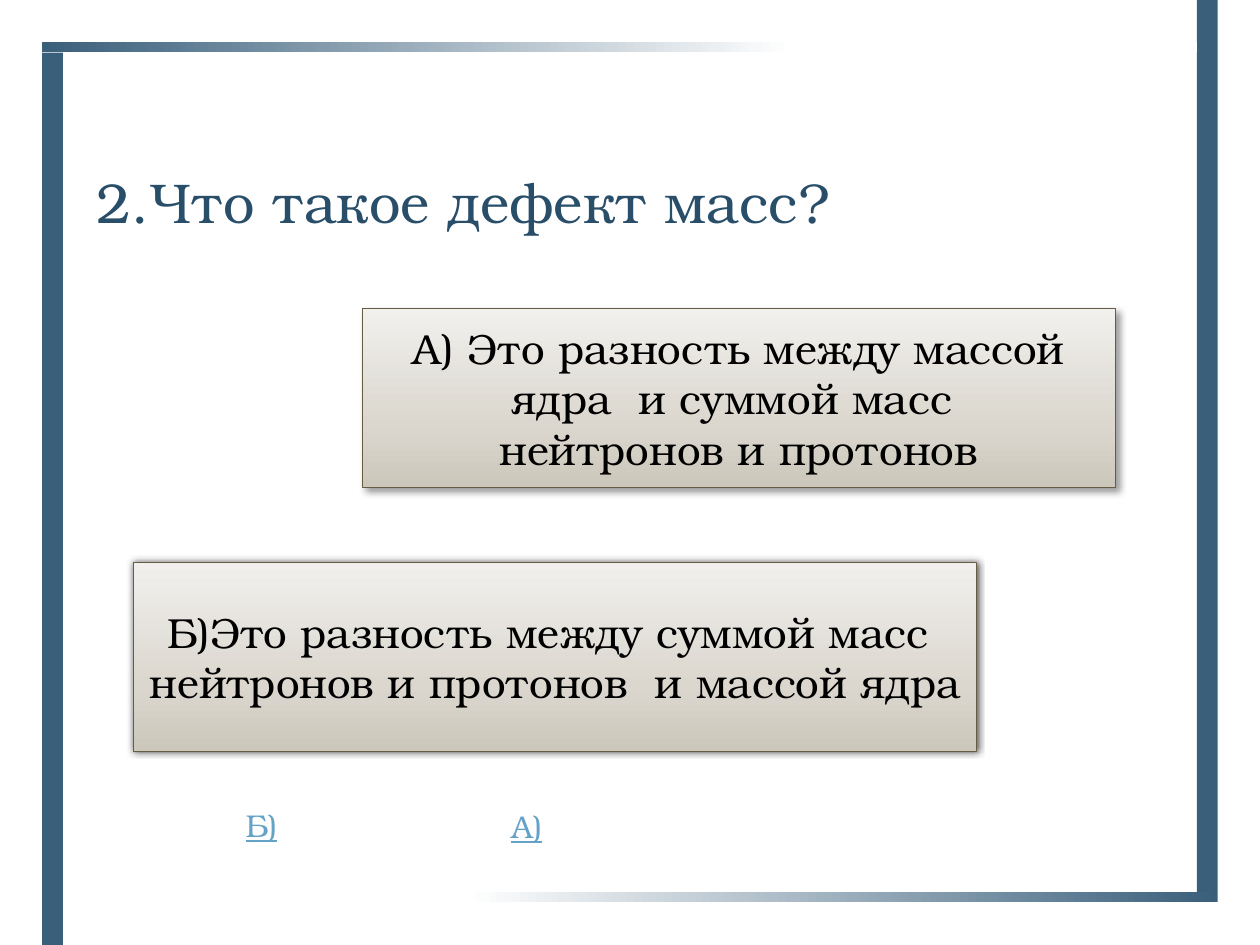
from pptx import Presentation
from pptx.dml.color import RGBColor
from pptx.enum.shapes import MSO_SHAPE
from pptx.enum.text import MSO_ANCHOR, MSO_AUTO_SIZE, PP_ALIGN
from pptx.oxml import parse_xml
from pptx.oxml.ns import nsdecls, qn
from pptx.util import Cm, Pt

RECTANGLE = MSO_SHAPE.RECTANGLE
BUTTON = MSO_SHAPE.ACTION_BUTTON_CUSTOM
MIDDLE, BOTTOM = MSO_ANCHOR.MIDDLE, MSO_ANCHOR.BOTTOM
LEFT, CENTER = PP_ALIGN.LEFT, PP_ALIGN.CENTER
NO_FIT = MSO_AUTO_SIZE.NONE

FONT = "TeX Gyre Bonum"
COLORS = {
    "frame": "3A5F7B",
    "paper": "FFFFFF",
    "title": "284E6A",
    "answer": "000000",
    "label": "64A2C8",
    "outline": "655C43",
    "button_dark": "CCC7BB",
    "button_mid": "DBD7CF",
    "button_light": "F1F0ED",
}
FADE = [(0, "frame"), (65, "paper"), (100, "paper")]
BUTTON_STOPS = [(0, "button_dark"), (35, "button_mid"), (100, "button_light")]


def fill_gradient(shape, stops, angle):
    """Fill a shape with a linear gradient, angle in clockwise degrees."""
    shape.fill.gradient()
    gradient = shape.element.spPr.find(qn("a:gradFill"))
    stop_xml = "".join(
        f'<a:gs pos="{position * 1000}"><a:srgbClr val="{COLORS[name]}"/></a:gs>'
        for position, name in stops
    )
    new_gradient = parse_xml(
        f'<a:gradFill {nsdecls("a")} rotWithShape="1"><a:gsLst>{stop_xml}</a:gsLst>'
        f'<a:lin ang="{angle * 60000}" scaled="0"/></a:gradFill>'
    )
    gradient.getparent().replace(gradient, new_gradient)


def add_text(paragraph, text, size, color, alignment=LEFT):
    paragraph.alignment = alignment
    run = paragraph.add_run()
    run.text = text
    run.font.name = FONT
    run.font.size = Pt(size)
    run.font.color.rgb = RGBColor.from_string(COLORS[color])
    return run


presentation = Presentation()
presentation.slide_width = Cm(25.4)
presentation.slide_height = Cm(19.05)
slide = presentation.slides.add_slide(presentation.slide_layouts[1])
title, body = slide.placeholders

# Frame: two solid side bars and two fading bars (left, top, width, height, angle)
frame_bars = [
    (24.13, 0, 0.42, 17.98, None),
    (0.85, 1.06, 0.42, 17.99, None),
    (1.27, 17.98, 23.28, 0.21, 180),
    (0.85, 0.85, 23.28, 0.21, 0),
]
for left, top, width, height, angle in frame_bars:
    bar = slide.shapes.add_shape(RECTANGLE, Cm(left), Cm(top), Cm(width), Cm(height))
    bar.shadow.inherit = False
    bar.line.fill.background()
    if angle is None:
        bar.fill.solid()
        bar.fill.fore_color.rgb = RGBColor.from_string(COLORS["frame"])
    else:
        fill_gradient(bar, FADE, angle)

# Question, raised one line above the bottom of its box
title.left, title.top, title.width, title.height = Cm(1.7), Cm(0.53), Cm(21.9), Cm(5.67)
title.text_frame.auto_size = NO_FIT
title.text_frame.vertical_anchor = BOTTOM
title.text_frame.margin_bottom = Cm(1.47)
add_text(title.text_frame.paragraphs[0], "2.Что такое дефект масс?", 32, "title")

# Answers: the first is the body placeholder, the second a button
body.left, body.top, body.width, body.height = Cm(7.3), Cm(6.22), Cm(15.19), Cm(3.6)
body.element.spPr.append(
    parse_xml(f'<a:prstGeom {nsdecls("a")} prst="actionButtonBlank"><a:avLst/></a:prstGeom>')
)
button = slide.shapes.add_shape(BUTTON, Cm(2.69), Cm(11.33), Cm(17), Cm(3.81))

# Shadows: opacity %, distance in points, direction in degrees
answers = [
    (body, (40, 3, 45),
     ["А) Это разность между массой", "ядра  и суммой масс ", "нейтронов и протонов"]),
    (button, (64, 0, 0),
     ["Б)Это разность между суммой масс ", "нейтронов и протонов  и массой ядра"]),
]
for shape, (opacity, distance, direction), lines in answers:
    fill_gradient(shape, BUTTON_STOPS, 270)
    shape.line.color.rgb = RGBColor.from_string(COLORS["outline"])
    shape.line.width = Pt(0.5)
    effects = parse_xml(
        f'<a:effectLst {nsdecls("a")}><a:outerShdw blurRad="{Pt(4)}" dist="{Pt(distance)}" '
        f'dir="{direction * 60000}" algn="ctr" rotWithShape="0"><a:srgbClr val="000000">'
        f'<a:alpha val="{opacity * 1000}"/></a:srgbClr></a:outerShdw></a:effectLst>'
    )
    shape.element.spPr.append(effects)

    frame = shape.text_frame
    frame.word_wrap = False
    frame.auto_size = NO_FIT
    frame.vertical_anchor = MIDDLE
    for index, line in enumerate(lines):
        paragraph = frame.add_paragraph() if index else frame.paragraphs[0]
        properties = paragraph._p.get_or_add_pPr()
        properties.set("marL", "0")
        properties.set("indent", "0")
        properties.append(parse_xml(f'<a:buNone {nsdecls("a")}/>'))
        paragraph.space_before = Pt(0)
        add_text(paragraph, line, 24, "answer", CENTER)

# Choice labels
for text, left, top in [("Б)", 4.7, 16.13), ("А)", 10.06, 16.15)]:
    label = slide.shapes.add_textbox(Cm(left), Cm(top), Cm(1.16), Cm(1.02))
    label.text_frame.word_wrap = False
    label.text_frame.auto_size = MSO_AUTO_SIZE.SHAPE_TO_FIT_TEXT
    run = add_text(label.text_frame.paragraphs[0], text, 18, "label")
    run.font.underline = True

presentation.save("out.pptx")
